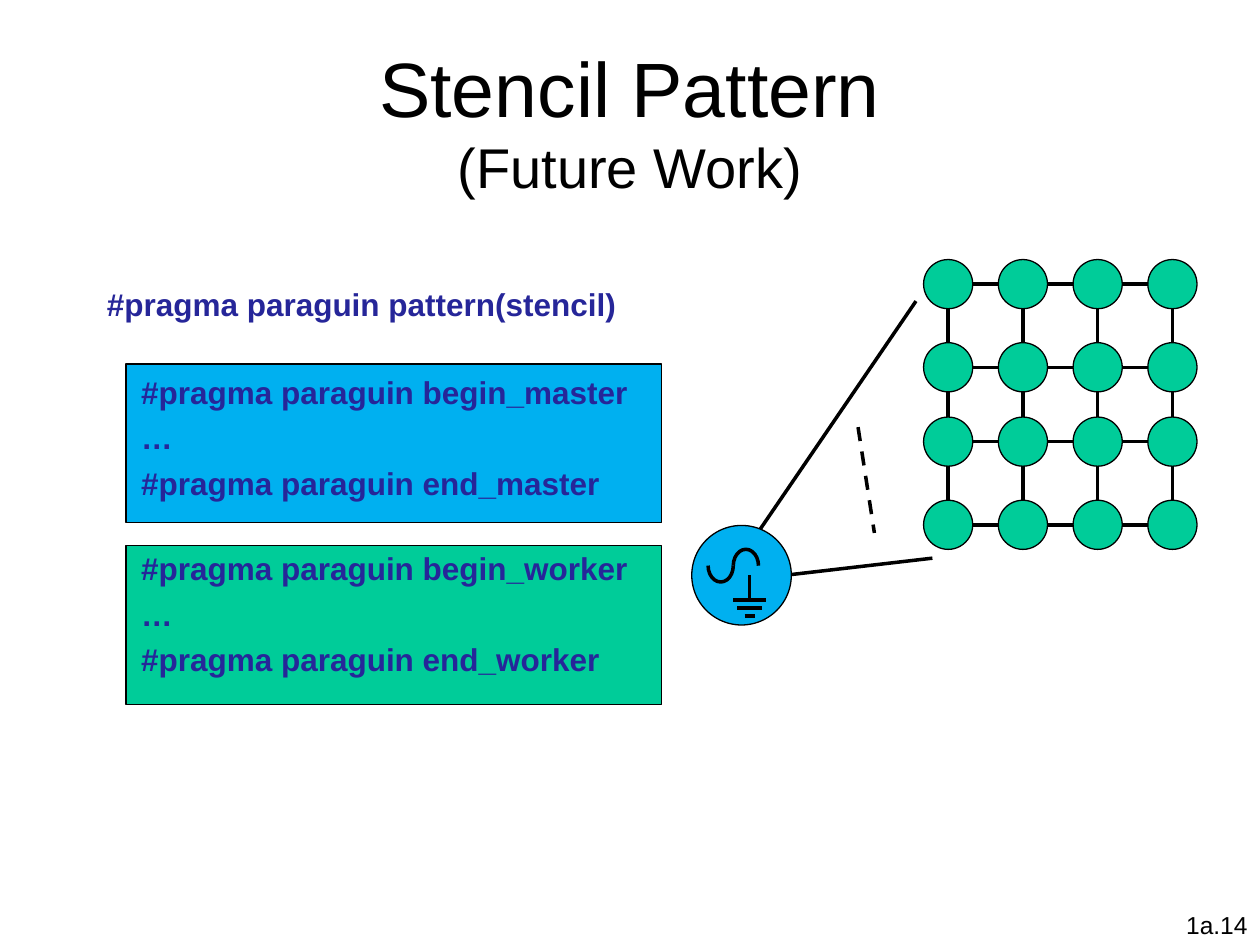
from itertools import product

from lxml import etree
from pptx import Presentation
from pptx.dml.color import RGBColor
from pptx.enum.dml import MSO_LINE
from pptx.enum.shapes import MSO_CONNECTOR, MSO_SHAPE
from pptx.enum.text import MSO_ANCHOR, PP_ALIGN
from pptx.oxml.ns import qn
from pptx.util import Inches, Pt

RECT, OVAL, ARC = MSO_SHAPE.RECTANGLE, MSO_SHAPE.OVAL, MSO_SHAPE.ARC
LEFT, MID, RIGHT = PP_ALIGN.LEFT, PP_ALIGN.CENTER, PP_ALIGN.RIGHT
TOP, CENTER = MSO_ANCHOR.TOP, MSO_ANCHOR.MIDDLE
DASH = MSO_LINE.DASH

BLACK, NAVY, BLUE, GREEN = "000000", "262699", "00B0F0", "00CC99"
PLAIN = {"name": "Arial", "bold": False}
CODE = {"name": "Arial", "bold": True, "size": Pt(18)}


def color(code):
    return RGBColor.from_string(code)


def write(shape, lines, tint=BLACK, align=LEFT, anchor=TOP, pad=(0.1, 0.05), gap=0):
    """Fill a shape with (text, font format) lines; pad is the side and top inset."""
    frame = shape.text_frame
    side, top = map(Inches, pad)
    form = {"word_wrap": True, "vertical_anchor": anchor, "margin_left": side,
            "margin_right": side, "margin_top": top, "margin_bottom": top}
    for key, value in form.items():
        setattr(frame, key, value)
    for i, (text, font) in enumerate(lines):
        para = frame.add_paragraph() if i else frame.paragraphs[0]
        para.alignment = align
        para.space_after = Pt(gap)
        run = para.add_run()
        run.text = text
        for key, value in font.items():
            setattr(run.font, key, value)
        run.font.color.rgb = color(tint)


def label(shapes, box, lines, **form):
    write(shapes.add_textbox(*map(Inches, box)), lines, **form)


def solid(shapes, kind, box, fill):
    shape = shapes.add_shape(kind, *map(Inches, box))
    shape.shadow.inherit = False
    shape.fill.solid()
    shape.fill.fore_color.rgb = color(fill)
    shape.line.color.rgb = color(BLACK)
    shape.line.width = Pt(0.75)
    return shape


def link(shapes, start, end, dash=None):
    line = shapes.add_connector(MSO_CONNECTOR.STRAIGHT, *map(Inches, (*start, *end)))
    line.line.color.rgb = color(BLACK)
    line.line.width = Pt(2)
    if dash:
        line.line.dash_style = dash
    etree.SubElement(line._element.spPr, qn("a:effectLst"))


def bow(shapes, box, flip):
    """Draw a half-ellipse arc, upside down when flip is set."""
    arc = shapes.add_shape(ARC, *map(Inches, box))
    arc.shadow.inherit = False
    arc.adjustments[0] = 108
    arc.fill.background()
    arc.line.color.rgb = color(BLACK)
    arc.line.width = Pt(2)
    if flip:
        arc._element.spPr.xfrm.set("flipV", "1")


def panel(shapes, box, fill, role, top):
    texts = f"#pragma paraguin begin_{role}", "…", f"#pragma paraguin end_{role}"
    write(solid(shapes, RECT, box, fill), [(text, CODE) for text in texts],
          tint=NAVY, pad=(0.12, top), gap=4.4)


def mesh(shapes, box):
    """Draw a 4 by 4 grid of nodes, each linked to its neighbours."""
    left, top, wide, high = box
    size, gap = 0.39, 0.66
    step = (wide - size) / 3
    cols = [left + step * i for i in range(4)]
    rows = [top, top + gap, top + high - size - gap, top + high - size]
    half = size / 2
    for x, y in product(cols, rows):
        solid(shapes, OVAL, (x, y, size, size), GREEN)
    for y, (a, b) in product(rows, zip(cols, cols[1:])):
        link(shapes, (a + size, y + half), (b, y + half))
    for x, (a, b) in product(cols, zip(rows, rows[1:])):
        link(shapes, (x + half, a + size), (x + half, b))


def source(shapes, box):
    """Draw the master node with its wave and ground signs."""
    left, top, size, _ = box
    solid(shapes, OVAL, box, BLUE)
    for shift, flip in ((0.33, False), (0.13, True)):
        bow(shapes, (left + shift, top + 0.19, 0.2, 0.26), flip)
    x, y = left + 0.46, top + 0.59
    link(shapes, (x, top + size / 2), (x, y))
    for i, half in enumerate((0.13, 0.1, 0.04)):
        bar = y + 0.065 * i
        link(shapes, (x - half, bar), (x + half, bar))


def diagram(shapes, box):
    left, top, wide, high = box
    mesh(shapes, (left + 1.84, top, wide - 1.84, 2.3))
    link(shapes, (left + 0.79, top + 2.5), (left + 1.91, top + 2.37))
    link(shapes, (left + 1.78, top + 0.33), (left + 0.53, top + 2.16))
    source(shapes, (left, top + high - 0.79, 0.79, 0.79))
    link(shapes, (left + 1.32, top + 1.33), (left + 1.45, top + 2.17), DASH)


def main():
    deck = Presentation()
    deck.slide_width, deck.slide_height = Inches(10), Inches(7.5)
    shapes = deck.slides.add_slide(deck.slide_layouts[6]).shapes
    label(shapes, (0.75, 0.33, 8.5, 1.25),
          [("Stencil Pattern", {**PLAIN, "size": Pt(44)}),
           ("(Future Work)", {**PLAIN, "size": Pt(32)})], align=MID, anchor=CENTER)
    label(shapes, (0.75, 2.21, 4.5, 0.4),
          [("#pragma paraguin pattern(stencil)", CODE)], tint=NAVY)
    panel(shapes, (1, 2.89, 4.25, 1.26), BLUE, "master", 0.07)
    panel(shapes, (1, 4.33, 4.25, 1.26), GREEN, "worker", 0.03)
    diagram(shapes.add_group_shape().shapes, (5.49, 2.06, 4.01, 2.9))
    label(shapes, (7.92, 7.17, 2.08, 0.5),
          [("1a.14", {**PLAIN, "size": Pt(14)})], align=RIGHT)
    deck.save("out.pptx")


if __name__ == "__main__":
    main()
